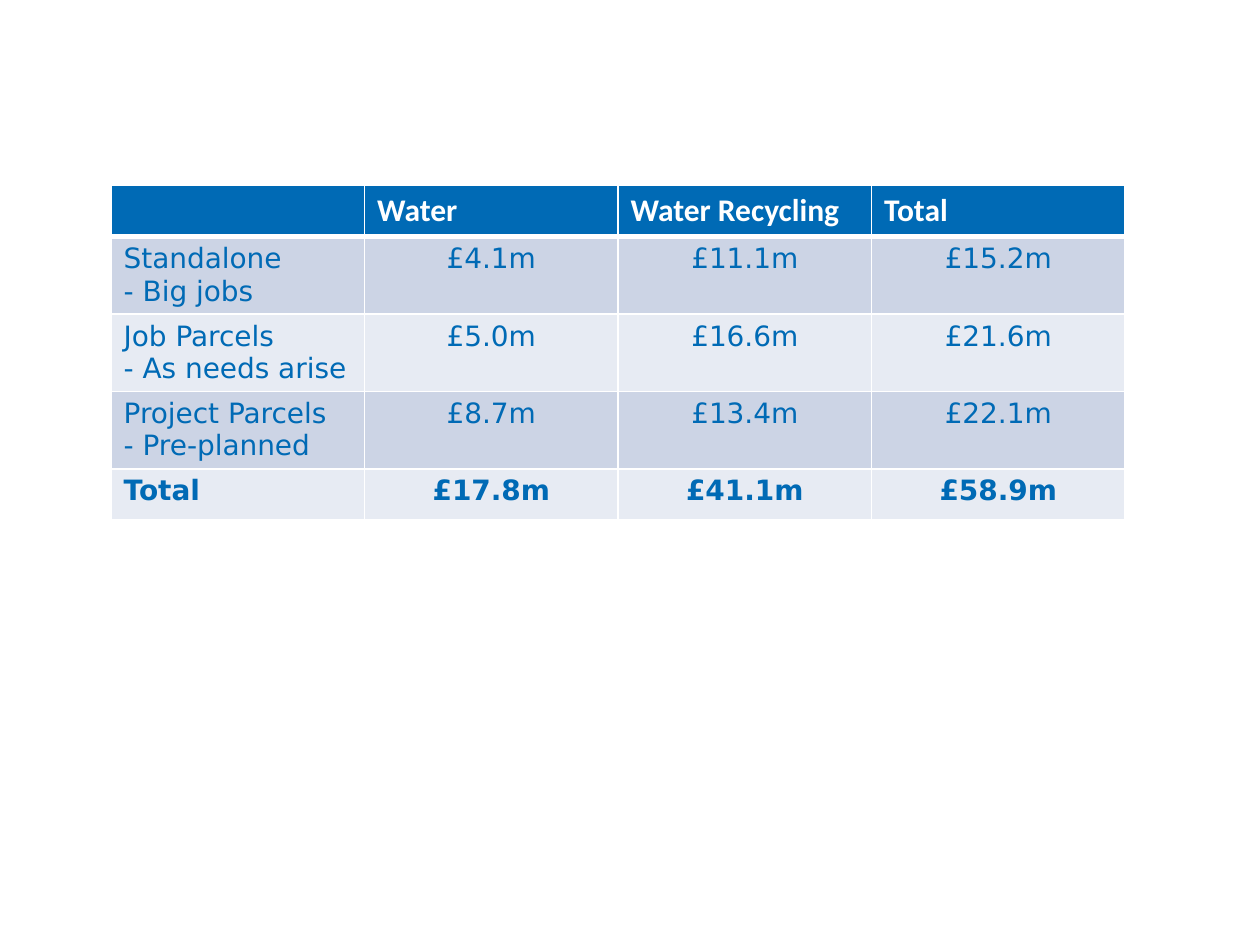
from lxml import etree
from pptx import Presentation
from pptx.dml.color import RGBColor
from pptx.enum.text import PP_ALIGN
from pptx.oxml.ns import qn
from pptx.util import Cm, Pt

LEFT, CENTER = PP_ALIGN.LEFT, PP_ALIGN.CENTER
BLANK_LAYOUT = 6
COLORS = {"blue": "006AB5", "band_dark": "CCD4E5", "band_light": "E7EBF3", "white": "FFFFFF"}

HEADINGS = ["", "Water", "Water Recycling", "Total"]
BUDGET = [
    ["Standalone\n- Big jobs", "£4.1m", "£11.1m", "£15.2m"],
    ["Job Parcels\n- As needs arise", "£5.0m", "£16.6m", "£21.6m"],
    ["Project Parcels\n- Pre-planned", "£8.7m", "£13.4m", "£22.1m"],
    ["Total", "£17.8m", "£41.1m", "£58.9m"],
]
ROW_HEIGHTS = [1.0, 1.56, 1.56, 1.56, 1.03]


def set_borders(cell, widths):
    """Draw white cell borders; widths in points by side tag."""
    properties = cell._tc.get_or_add_tcPr()
    for side, width in widths.items():
        line = etree.SubElement(properties, qn(f"a:{side}"), w=str(Pt(width)))
        fill = etree.SubElement(line, qn("a:solidFill"))
        etree.SubElement(fill, qn("a:srgbClr"), val=COLORS["white"])


def fill_cell(cell, text, fill, color, font_name, size, bold, align):
    cell.fill.solid()
    cell.fill.fore_color.rgb = RGBColor.from_string(COLORS[fill])
    frame = cell.text_frame
    for index, line in enumerate(text.split("\n")):
        paragraph = frame.add_paragraph() if index else frame.paragraphs[0]
        paragraph.alignment = align
        paragraph.font.size = Pt(size)
        if not line:
            continue
        run = paragraph.add_run()
        run.text = line
        run.font.name = font_name
        run.font.size = Pt(size)
        run.font.bold = bold
        run.font.color.rgb = RGBColor.from_string(COLORS[color])


def add_budget_table(slide, left, top, width, height):
    rows = [HEADINGS] + BUDGET
    table = slide.shapes.add_table(len(rows), len(HEADINGS), left, top, width, height).table
    for column in table.columns:
        column.width = width // len(HEADINGS)
    for row, row_height in zip(table.rows, ROW_HEIGHTS):
        row.height = Cm(row_height)

    for r, texts in enumerate(rows):
        is_total = r == len(rows) - 1
        band = "band_dark" if r % 2 else "band_light"
        for c, text in enumerate(texts):
            cell = table.cell(r, c)
            # The rule under the heading row is heavier than the grid
            set_borders(cell, {"lnL": 1, "lnR": 1, "lnT": 3 if r == 1 else 1,
                               "lnB": 3 if r == 0 else 1})
            if r == 0:
                fill_cell(cell, text, "blue", "white", "Calibri", 18, True, LEFT)
            else:
                fill_cell(cell, text, band, "blue", "DejaVu Sans", 16, is_total,
                          CENTER if c else LEFT)


def main():
    presentation = Presentation()
    presentation.slide_width, presentation.slide_height = Cm(25.4), Cm(19.05)
    slide = presentation.slides.add_slide(presentation.slide_layouts[BLANK_LAYOUT])
    add_budget_table(slide, Cm(2.24), Cm(3.74), Cm(20.44), Cm(sum(ROW_HEIGHTS)))
    presentation.save("out.pptx")


if __name__ == "__main__":
    main()
